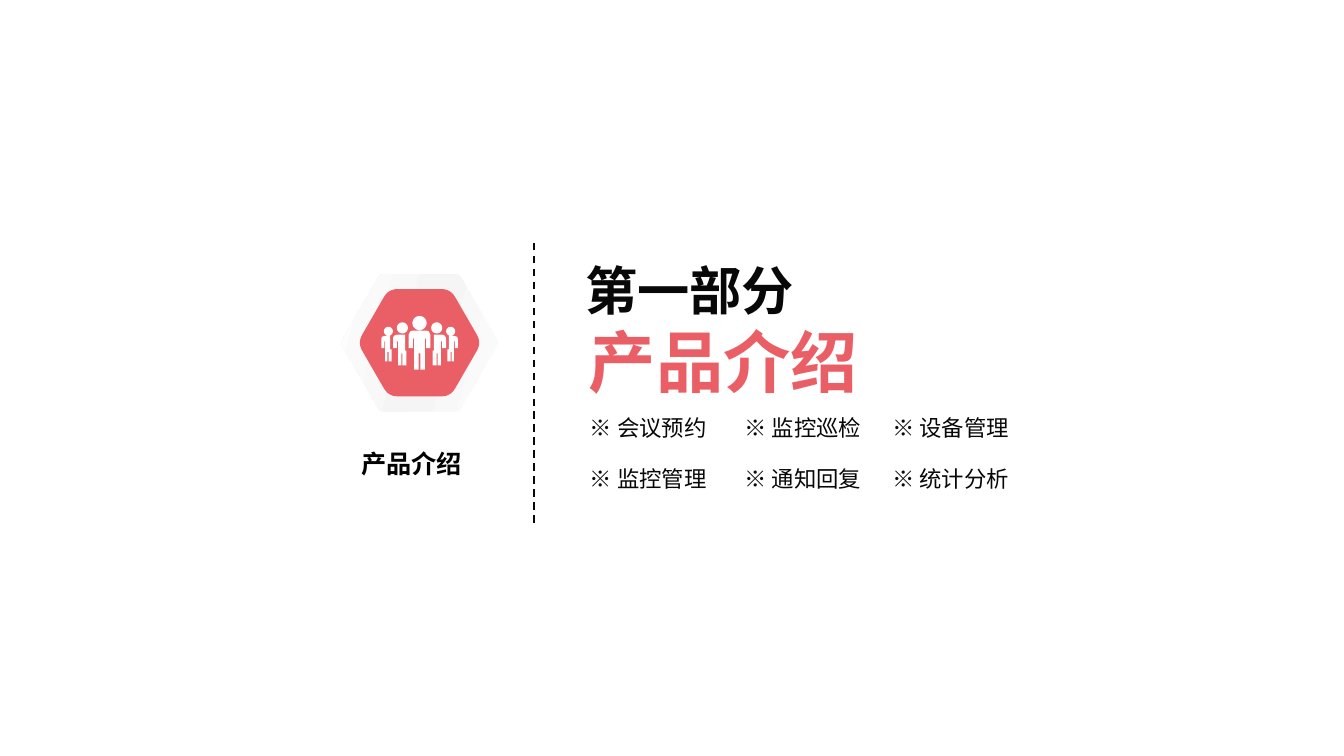
from math import cos, pi, sin
from copy import deepcopy
from itertools import product

from lxml.etree import SubElement
from pptx import Presentation
from pptx.dml.color import RGBColor
from pptx.enum.dml import MSO_LINE
from pptx.enum.shapes import MSO_CONNECTOR
from pptx.enum.text import MSO_ANCHOR, MSO_AUTO_SIZE, PP_ALIGN
from pptx.oxml.ns import qn
from pptx.util import Pt

COLORS = {"ink": "080808", "black": "000000", "red": "EA5E66",
          "white": "FFFFFF", "grey": "F5F5F5"}
FONT = "Arial"
CENTER_X, CENTER_Y = 224.8, 183.6
ICON_TOP = 169.2
FEATURES = ["会议预约", "监控巡检", "设备管理", "监控管理", "通知回复", "统计分析"]
COLUMNS = [311, 393.8, 473]
ROWS = [219.6, 247]

HEADS = [(9.2, 6.5, 2.95), (16.7, 8.3, 2.4)]
FRONT_HALF = [(3.6, 7.9), (5, 8.4), (5.8, 10.1), (5.8, 17.3), (3.6, 17.3),
              (3.6, 12.2), (2.9, 12.2), (2.9, 28.8), (0.5, 28.8), (0.5, 20.2)]
BODIES = [
    [(7.7, 10.1), (12, 10.1), (13.6, 10.7), (14.2, 11.8), (14.2, 17.3),
     (12.1, 17.3), (12.1, 13.7), (11.4, 13.7), (11.4, 26.6), (9.7, 26.6),
     (9.7, 20.2), (9.2, 20.2), (9.2, 26.6), (7, 26.6), (7, 18.7), (7.7, 18.7)],
    [(15.7, 10.8), (18.7, 10.8), (20.2, 11.3), (20.5, 12.4), (20.5, 17.3),
     (18.9, 17.3), (18.9, 13.7), (18.4, 13.7), (18.4, 24.5), (17.2, 24.5),
     (17.2, 19.4), (16.6, 19.4), (16.6, 24.5), (14.9, 24.5), (14.9, 18), (15.7, 18)],
]


def rgb(name):
    return RGBColor.from_string(COLORS[name])


def add_text(p, text, size, color="ink", bold=False, align=PP_ALIGN.LEFT, indent=0):
    p.alignment = align
    if indent:
        p._p.get_or_add_pPr().set("marL", str(Pt(indent)))
    r = p.add_run()
    r.text = text
    r.font.name = FONT
    r.font.size = Pt(size)
    r.font.bold = bold
    r.font.color.rgb = rgb(color)


def add_title(s):
    title = s.shapes.title
    title.left, title.top, title.width, title.height = Pt(303), Pt(134.6), Pt(158.4), Pt(85)
    tf = title.text_frame
    tf.word_wrap = False
    tf.auto_size = MSO_AUTO_SIZE.SHAPE_TO_FIT_TEXT
    tf.vertical_anchor = MSO_ANCHOR.TOP
    tf.margin_left = tf.margin_right = 0
    add_text(tf.paragraphs[0], "第一部分", 28, bold=True, indent=10.5)
    add_text(tf.add_paragraph(), "产品介绍", 36, color="red", bold=True,
             align=PP_ALIGN.CENTER)


def add_box(s, x, y, w, h, text, size, margins=(7.2, 3.6), **fmt):
    tf = s.shapes.add_textbox(Pt(x), Pt(y), Pt(w), Pt(h)).text_frame
    tf.word_wrap = True
    tf.auto_size = MSO_AUTO_SIZE.SHAPE_TO_FIT_TEXT
    tf.margin_left = tf.margin_right = Pt(margins[0])
    tf.margin_top = tf.margin_bottom = Pt(margins[1])
    add_text(tf.paragraphs[0], text, size, **fmt)


def add_divider(s, x, top, bottom):
    line = s.shapes.add_connector(MSO_CONNECTOR.STRAIGHT, Pt(x), Pt(bottom), Pt(x), Pt(top))
    line.line.color.rgb = rgb("ink")
    line.line.width = Pt(1)
    line.line.dash_style = MSO_LINE.DASH
    SubElement(line._element.spPr, qn("a:effectLst"))


def add_outline(s, contours, color):
    points = [[(Pt(x), Pt(y)) for x, y in contour] for contour in contours]
    builder = s.shapes.build_freeform(*points[0][0])
    for i, contour in enumerate(points):
        if i:
            builder.move_to(*contour[0])
        builder.add_line_segments(contour[1:], close=True)
    sp = builder.convert_to_shape()
    sp.shadow.inherit = False
    sp.fill.solid()
    sp.fill.fore_color.rgb = rgb(color)
    sp.line.fill.background()
    return sp


def rounded_hexagon(radius, cut, steps=6):
    corners = [(CENTER_X + radius * cos(i * pi / 3), CENTER_Y + radius * sin(i * pi / 3))
               for i in range(6)]
    points = []
    for i, corner in enumerate(corners):
        before, after = corners[i - 1], corners[(i + 1) % 6]
        for t in (k / steps for k in range(steps + 1)):
            back, ahead = cut / radius * (1 - t) ** 2, cut / radius * t ** 2
            points.append(tuple(c + back * (b - c) + ahead * (a - c)
                                for c, b, a in zip(corner, before, after)))
    return points


def circle(x, y, r, steps=32):
    return [(x + r * cos(2 * pi * i / steps), y + r * sin(2 * pi * i / steps))
            for i in range(steps)]


def mirrored(points):
    return [(-x, y) for x, y in reversed(points)]


def add_people(s):
    side = BODIES + [circle(*head) for head in HEADS]
    contours = [circle(0, 3.9, 3.8), FRONT_HALF + mirrored(FRONT_HALF)]
    contours += side + [mirrored(points) for points in side]
    add_outline(s, [[(CENTER_X + x, ICON_TOP + y) for x, y in c] for c in contours], "white")


def add_badge(s):
    frame = add_outline(s, [rounded_hexagon(42.4, 2)], "grey")
    frame.rotation = 240
    frame.fill.gradient()
    frame.fill.gradient_angle = 45
    first = frame._element.spPr.find(".//" + qn("a:gs"))
    first.addnext(deepcopy(first))
    stops = zip(frame.fill.gradient_stops, [0, 0.47, 1], ["white", "grey", "white"])
    for stop, position, color in stops:
        stop.position = position
        stop.color.rgb = rgb(color)
    add_outline(s, [rounded_hexagon(33.2, 5)], "red")
    add_people(s)


def main():
    prs = Presentation()
    prs.slide_width, prs.slide_height = Pt(720), Pt(405)
    s = prs.slides.add_slide(prs.slide_layouts[5])
    add_title(s)
    add_divider(s, 286.2, 129, 280)
    for (y, x), name in zip(product(ROWS, COLUMNS), FEATURES):
        add_box(s, x, y, 79, 19.4, f"※ {name}", 12, margins=(5, 2.2))
    add_box(s, 143.3, 236.9, 154.8, 23.8, "产品介绍", 13.5, color="black", bold=True,
            align=PP_ALIGN.CENTER)
    add_badge(s)
    prs.save("out.pptx")


if __name__ == "__main__":
    main()
